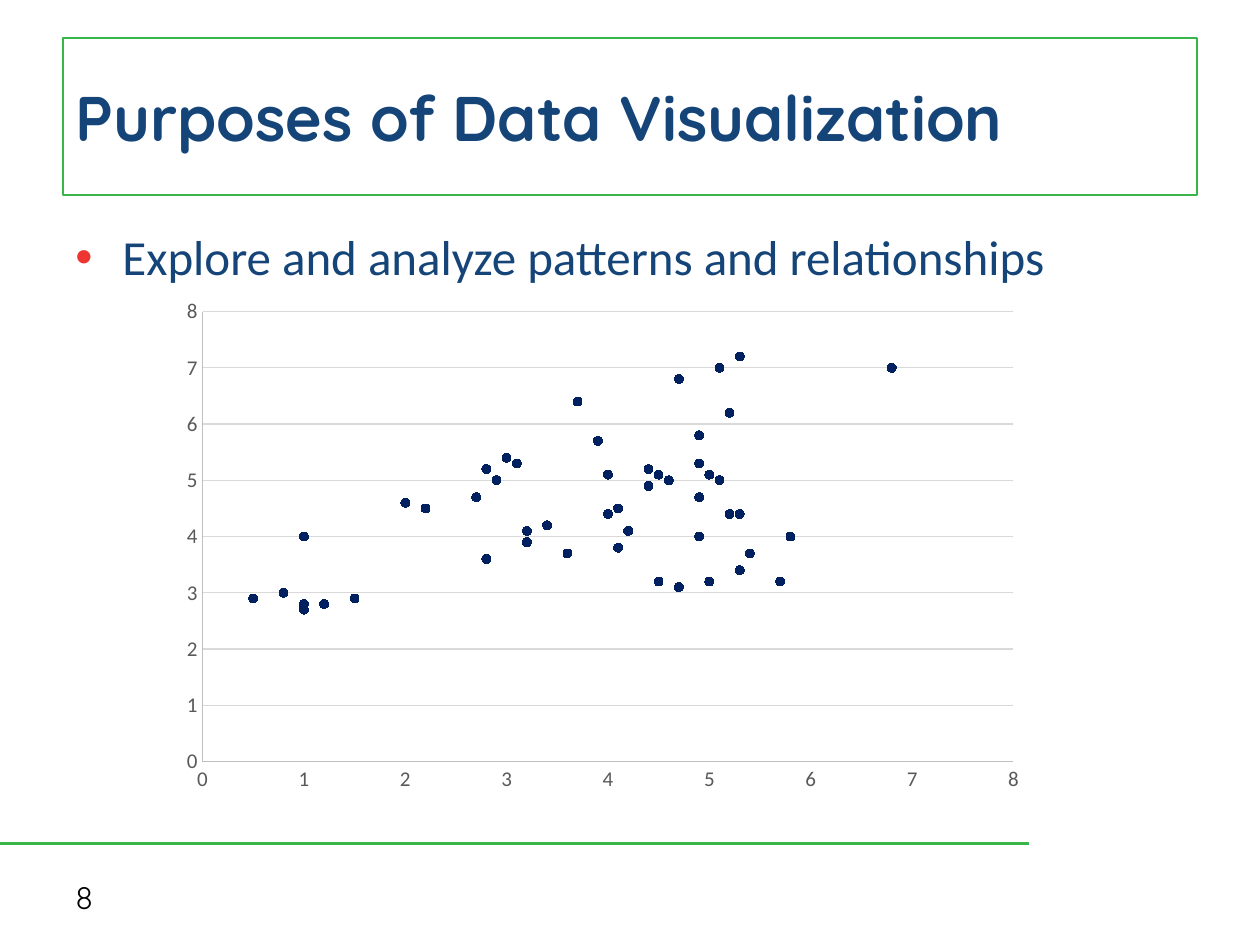
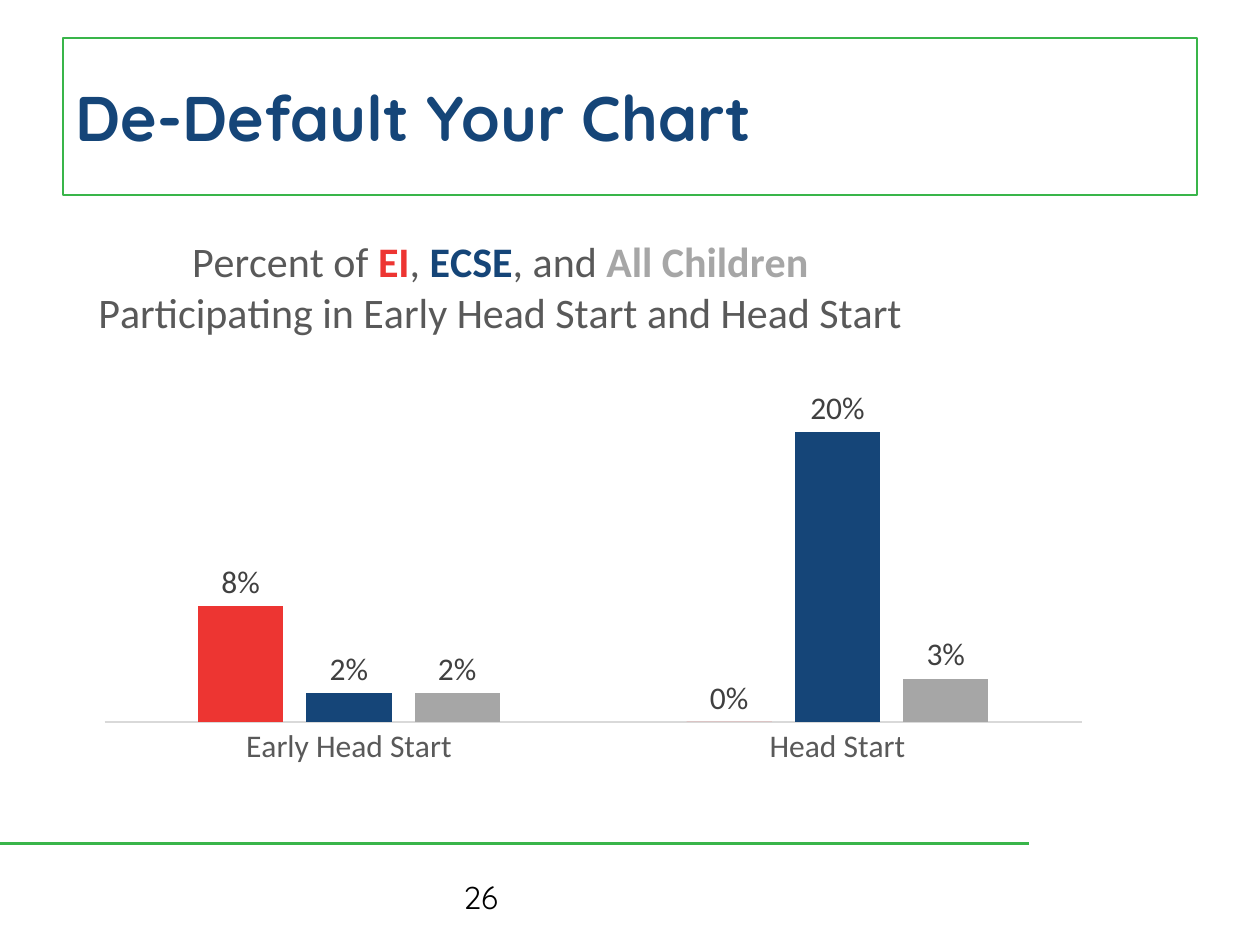
from lxml import etree
from pptx import Presentation
from pptx.chart.data import CategoryChartData, XyChartData
from pptx.dml.color import RGBColor
from pptx.enum.chart import (XL_CHART_TYPE, XL_LABEL_POSITION,
                             XL_MARKER_STYLE, XL_TICK_MARK)
from pptx.enum.shapes import MSO_CONNECTOR, MSO_SHAPE
from pptx.enum.text import MSO_ANCHOR, PP_ALIGN
from pptx.oxml.ns import qn
from pptx.util import Cm, Pt

SCATTER = XL_CHART_TYPE.XY_SCATTER
COLUMNS = XL_CHART_TYPE.COLUMN_CLUSTERED
OUTSIDE_END = XL_LABEL_POSITION.OUTSIDE_END
CIRCLE = XL_MARKER_STYLE.CIRCLE
NO_TICK = XL_TICK_MARK.NONE
STRAIGHT = MSO_CONNECTOR.STRAIGHT
RECTANGLE = MSO_SHAPE.RECTANGLE
MIDDLE, TOP = MSO_ANCHOR.MIDDLE, MSO_ANCHOR.TOP
LEFT, CENTER = PP_ALIGN.LEFT, PP_ALIGN.CENTER

COLORS = {
    "green": "39B54A", "blue": "154578", "red": "ED3532", "gray": "A6A6A6",
    "navy": "002060", "black": "000000", "text": "595959", "label": "404040",
    "axis": "BFBFBF", "grid": "D9D9D9",
}
HEADING_FONT, BODY_FONT = "Quicksand", "Calibri"
MARGIN = 1.27

# Scatter points: x and y in matching order
POINTS_X = [1, 1, 1.2, 1.5, 0.5, 0.8, 4.7, 4.5, 5.7, 5, 5.3, 2.8, 3.6, 5.4,
            4.1, 3.2, 1, 4.9, 5.8, 3.2, 4.2, 3.4, 5.3, 4, 5.2, 4.1, 2.2, 2,
            4.9, 2.7, 4.4, 6.8, 4.4, 5.1, 2.9, 5.1, 4.6, 4, 5, 4.5, 4.4, 2.8,
            5.3, 4.9, 3.1, 3, 3.9, 4.9, 5.2, 3.7, 4.7]
POINTS_Y = [2.7, 2.8, 2.8, 2.9, 2.9, 3, 3.1, 3.2, 3.2, 3.2, 3.4, 3.6, 3.7,
            3.7, 3.8, 3.9, 4, 4, 4, 4.1, 4.1, 4.2, 4.4, 4.4, 4.4, 4.5, 4.5,
            4.6, 4.7, 4.7, 4.9, 7, 4.9, 7, 5, 5, 5, 5.1, 5.1, 5.1, 5.2, 5.2,
            7.2, 5.3, 5.3, 5.4, 5.7, 5.8, 6.2, 6.4, 6.8]

# Column series: name, values, colour
PARTICIPATION = [
    ("EI", (0.08, 0), "red"),
    ("ECSE", (0.02, 0.2), "blue"),
    ("All Children", (0.02, 0.03), "gray"),
]


def rgb(name):
    return RGBColor.from_string(COLORS[name])


def style_font(font, size, color, name=BODY_FONT, bold=False):
    font.size, font.name, font.bold = Pt(size), name, bold
    font.color.rgb = rgb(color)


def style_line(line, color, width):
    line.color.rgb = rgb(color)
    line.width = Pt(width)


def add_run(p, text, size, color, name=BODY_FONT, bold=False):
    r = p.add_run()
    r.text = text
    style_font(r.font, size, color, name, bold)


def first_paragraph(shape, anchor):
    tf = shape.text_frame
    tf.word_wrap = True
    tf.vertical_anchor = anchor
    p = tf.paragraphs[0]
    p.alignment = LEFT
    return p


# Shared frame: footer line, page number, title box
def add_frame(prs, title, number, number_left):
    s = prs.slides.add_slide(prs.slide_layouts[6])
    line = s.shapes.add_connector(STRAIGHT, 0, Cm(17), Cm(20.75), Cm(17))
    style_line(line.line, "green", 1.5)
    etree.SubElement(line._element.spPr, qn("a:effectLst"))

    box = s.shapes.add_textbox(Cm(number_left), Cm(17.58), Cm(5.92), Cm(1.02))
    add_run(first_paragraph(box, MIDDLE), number, 18, "black", HEADING_FONT)

    sp = s.shapes.add_shape(RECTANGLE, Cm(MARGIN), Cm(0.76), Cm(22.86), Cm(3.18))
    sp.shadow.inherit = False
    sp.fill.background()
    style_line(sp.line, "green", 1)
    add_run(first_paragraph(sp, MIDDLE), title, 36, "blue", HEADING_FONT, True)
    return s


def add_bullet(s, text):
    box = s.shapes.add_textbox(Cm(MARGIN), Cm(4.45), Cm(22.43), Cm(1.6))
    p = first_paragraph(box, TOP)
    pPr = p._p.get_or_add_pPr()
    indent = Cm(0.95)
    pPr.set("marL", str(indent))
    pPr.set("indent", str(-indent))
    color = etree.SubElement(pPr, qn("a:buClr"))
    etree.SubElement(color, qn("a:srgbClr"), val=COLORS["red"])
    etree.SubElement(pPr, qn("a:buFont"), typeface="Arial")
    etree.SubElement(pPr, qn("a:buChar"), char="•")
    add_run(p, text, 28, "blue")


# Chart helpers
def set_layout(parent, target=None, **fractions):
    layout = parent.find(qn("c:layout"))
    if layout is None:
        layout = etree.Element(qn("c:layout"))
        parent.insert(0, layout)
    manual = etree.SubElement(layout, qn("c:manualLayout"))
    if target:
        etree.SubElement(manual, qn("c:layoutTarget"), val=target)
    for key in ("x", "y"):
        etree.SubElement(manual, qn(f"c:{key}Mode"), val="edge")
    for key, value in fractions.items():
        etree.SubElement(manual, qn(f"c:{key}"), val=str(value))


def add_chart(s, kind, data, left, top, width, height, font_size, plot_box):
    chart = s.shapes.add_chart(kind, Cm(left), Cm(top), Cm(width), Cm(height),
                               data).chart
    style_font(chart.font, font_size, "black")
    chart.has_legend = False
    chart.has_title = False
    chart.plots[0].vary_by_categories = False
    set_layout(chart._chartSpace.chart.plotArea, "inner", **plot_box)
    return chart


def style_axis(axis, size, line_color):
    axis.major_tick_mark = axis.minor_tick_mark = NO_TICK
    axis.has_major_gridlines = False
    style_font(axis.tick_labels.font, size, "text")
    style_line(axis.format.line, line_color, 0.75)


def add_scatter(s):
    data = XyChartData()
    points = data.add_series("Series 1")
    for x, y in zip(POINTS_X, POINTS_Y):
        points.add_data_point(x, y)
    chart = add_chart(s, SCATTER, data, 3.38, 5.87, 17.58, 10.31, 12,
                      dict(x=0.04, y=0.04, w=0.93, h=0.88))
    for axis in (chart.category_axis, chart.value_axis):
        style_axis(axis, 12, "axis")
        axis.minimum_scale, axis.maximum_scale, axis.major_unit = 0, 8, 1
    chart.value_axis.has_major_gridlines = True
    style_line(chart.value_axis.major_gridlines.format.line, "grid", 0.75)

    series = chart.plots[0].series[0]
    series.format.line.fill.background()
    marker = series.marker
    marker.style, marker.size = CIRCLE, 5
    marker.format.fill.solid()
    marker.format.fill.fore_color.rgb = rgb("navy")
    style_line(marker.format.line, "navy", 0.75)


def add_chart_title(chart):
    chart.has_title = True
    title = chart.chart_title
    set_layout(title._element, x=0.01, y=0.02)
    tf = title.text_frame
    p = tf.paragraphs[0]
    p.alignment = CENTER
    add_run(p, "Percent of ", 24, "text")
    separators = [", ", ", and ", ""]
    for (name, _, color), separator in zip(PARTICIPATION, separators):
        add_run(p, name, 24, color, bold=True)
        if separator:
            add_run(p, separator, 24, "text")
    p = tf.add_paragraph()
    p.alignment = CENTER
    add_run(p, "Participating in Early Head Start and Head Start", 24, "text")


def add_columns(s):
    data = CategoryChartData(number_format="0%")
    data.categories = ["Early Head Start", "Head Start"]
    for name, values, _ in PARTICIPATION:
        data.add_series(name, values)
    chart = add_chart(s, COLUMNS, data, 1.7, 4.45, 20.52, 11.23, 10,
                      dict(x=0.02, y=0.25, w=0.96, h=0.65))
    add_chart_title(chart)
    style_axis(chart.category_axis, 18, "grid")
    axis = chart.value_axis
    axis.has_major_gridlines = False
    axis.minimum_scale, axis.maximum_scale = 0, 0.25
    axis.tick_labels.number_format = "0%"
    axis.tick_labels.number_format_is_linked = False
    axis.visible = False

    plot = chart.plots[0]
    plot.gap_width, plot.overlap = 219, -27
    for series, (_, _, color) in zip(plot.series, PARTICIPATION):
        series.format.fill.solid()
        series.format.fill.fore_color.rgb = rgb(color)
        series.invert_if_negative = False
        labels = series.data_labels
        labels.show_value = True
        labels.position = OUTSIDE_END
        labels.number_format = "0%"
        labels.number_format_is_linked = False
        style_font(labels.font, 18, "label")


def main():
    prs = Presentation()
    prs.slide_width, prs.slide_height = Cm(25.4), Cm(19.05)

    # Patterns and relationships
    s = add_frame(prs, "Purposes of Data Visualization", "8", MARGIN)
    add_bullet(s, "Explore and analyze patterns and relationships")
    add_scatter(s)

    # Chart without default styling
    s = add_frame(prs, "De-Default Your Chart", "26", 9.09)
    add_columns(s)

    prs.save("out.pptx")


if __name__ == "__main__":
    main()
